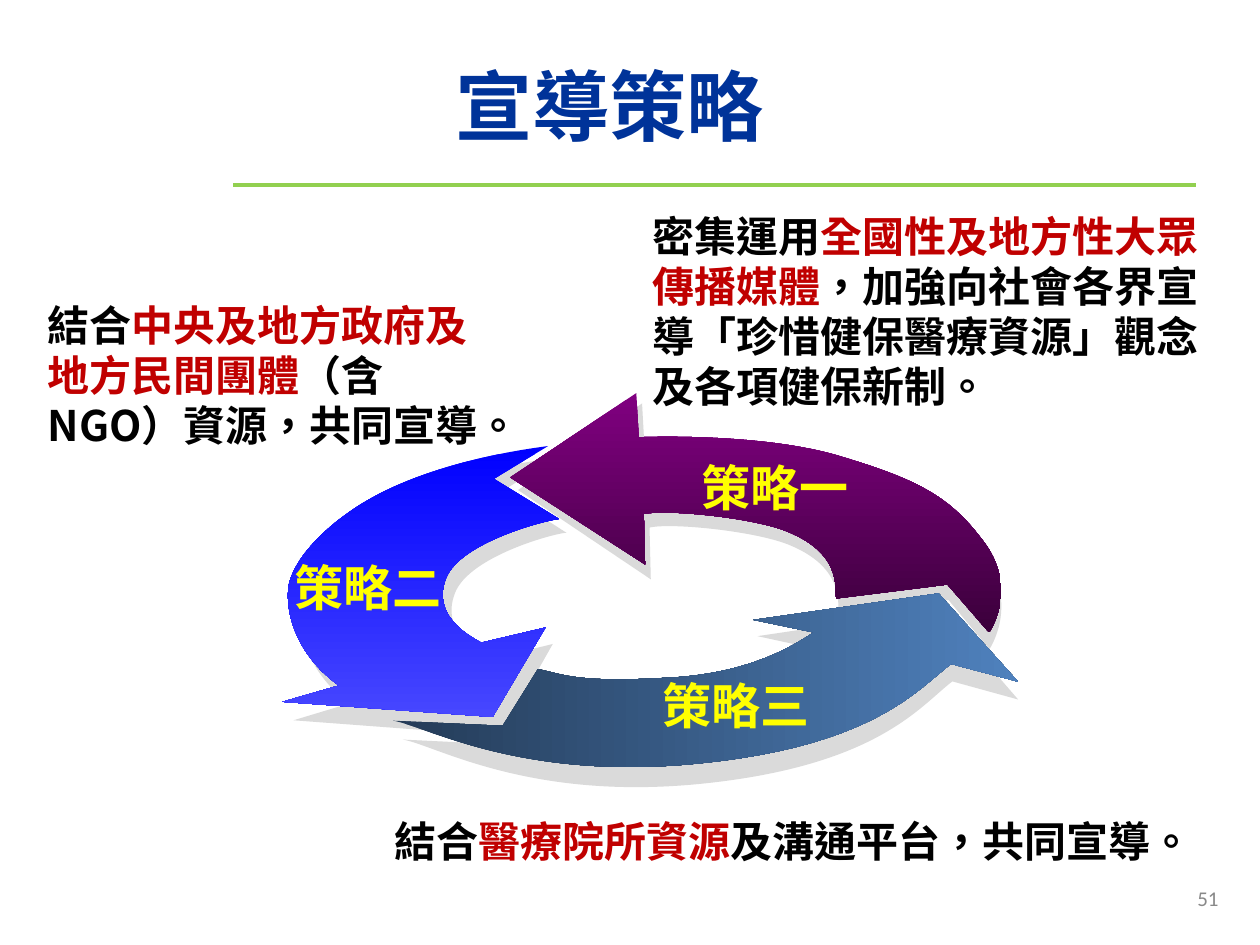
from lxml.etree import SubElement
from pptx import Presentation
from pptx.dml.color import RGBColor
from pptx.enum.shapes import MSO_CONNECTOR
from pptx.enum.text import MSO_ANCHOR, PP_ALIGN
from pptx.oxml.ns import qn
from pptx.util import Inches, Pt

COLORS = {
    "title": "003399", "rule": "92D050", "text": "000000", "accent": "C00000",
    "label": "FFFF00", "number": "898989", "shadow": "C0C0C0",
    "steel_dark": "243B57", "steel": "4F81BD",
    "purple": "800080", "purple_dark": "3B003B",
    "blue": "0000FF", "blue_light": "4747FF",
}
CJK = "Noto Sans CJK SC"

BOTTOM_ARROW = [
    (4.27, 5.31), (4.47, 5.35, 4.57, 5.42, 5.28, 5.38),
    (5.99, 5.35, 6.34, 5.09, 6.46, 5.02), (5.98, 4.92), (7.45, 4.71),
    (8.08, 5.41), (7.55, 5.27), (7.29, 5.46, 6.95, 5.92, 5.54, 6.06),
    (4.13, 6.2, 3.38, 5.76, 3.12, 5.72), (3.99, 5.76), (4.27, 5.31),
]
RIGHT_ARROW = [
    (5.07, 3.47), (5.05, 3.12), (4.05, 3.79), (5.12, 4.48), (5.11, 4.08),
    (5.29, 4.04, 5.99, 4.11, 6.25, 4.22), (6.72, 4.41, 6.61, 4.72, 6.64, 4.75),
    (7.52, 4.64), (7.85, 5.02), (7.89, 4.96, 8.07, 4.64, 7.8, 4.29),
    (7.53, 3.93, 7.27, 3.8, 6.63, 3.61), (5.99, 3.43, 5.07, 3.47, 5.07, 3.47),
]
LEFT_ARROW = [
    (2.24, 5.57), (3.91, 5.69), (4.33, 4.98), (3.82, 5.1),
    (3.69, 5.03, 3.43, 4.87, 3.54, 4.59), (3.65, 4.3, 4.36, 4.12, 4.44, 4.12),
    (3.92, 3.8), (4.35, 3.54), (3.81, 3.61, 3.33, 3.75, 2.99, 3.93),
    (2.65, 4.11, 2.34, 4.4, 2.29, 4.65), (2.26, 4.9, 2.38, 5.22, 2.69, 5.44),
    (2.24, 5.57),
]
ARROWS = [
    (BOTTOM_ARROW, ("steel_dark", "steel"), 0),
    (RIGHT_ARROW, ("purple", "purple_dark"), 270),
    (LEFT_ARROW, ("blue", "blue_light"), 270),
]


def shadow_point(x, y):
    return x + (8.08 - x) / 65, y + y / 38


class Deck:
    def __init__(self):
        self.prs = Presentation()
        self.prs.slide_width, self.prs.slide_height = Inches(10), Inches(7.5)
        self.s = self.prs.slides.add_slide(self.prs.slide_layouts[6])

    def color(self, name):
        return RGBColor.from_string(COLORS[name])

    def rule(self, x1, x2, y):
        line = self.s.shapes.add_connector(
            MSO_CONNECTOR.STRAIGHT, Inches(x1), Inches(y), Inches(x2), Inches(y))
        line.line.color.rgb = self.color("rule")
        line.line.width = Pt(2.25)
        SubElement(line._element.spPr, qn("a:effectLst"))

    def outline(self, steps, place=lambda x, y: (x, y)):
        points = [tuple(map(Inches, place(*step[i:i + 2])))
                  for step in steps for i in range(0, len(step), 2)]
        builder = self.s.shapes.build_freeform(*points[0], scale=1.0)
        builder.add_line_segments(points[1:], close=True)
        sp = builder.convert_to_shape()
        segments = iter(list(sp._element.iter(qn("a:lnTo"))))
        for step in steps[1:]:
            segment = next(segments)
            if len(step) == 6:
                segment.tag = qn("a:cubicBezTo")
                for _ in range(2):
                    end = next(segments)
                    end.getparent().remove(end)
                    segment.append(end[0])
        sp.shadow.inherit = False
        sp.line.fill.background()
        return sp

    def shadow(self, steps):
        sp = self.outline(steps, shadow_point)
        sp.fill.solid()
        sp.fill.fore_color.rgb = self.color("shadow")
        clr = sp._element.spPr.find(qn("a:solidFill"))[0]
        SubElement(clr, qn("a:alpha"), val="58000")

    def arrow(self, steps, shades, angle):
        sp = self.outline(steps)
        sp.fill.gradient()
        sp.fill.gradient_angle = angle
        for stop, shade in zip(sp.fill.gradient_stops, shades):
            stop.color.rgb = self.color(shade)

    def text(self, box, runs, size, font=CJK, bold=True, align=PP_ALIGN.LEFT,
             middle=False, wrap=True):
        tf = self.s.shapes.add_textbox(*map(Inches, box)).text_frame
        tf.word_wrap = wrap
        p = tf.paragraphs[0]
        p.alignment = align
        if middle:
            tf.vertical_anchor = MSO_ANCHOR.MIDDLE
        else:
            p.line_spacing = Pt(round(size * 1.19, 1))
        for words, color in runs:
            r = p.add_run()
            r.text = words
            r.font.size, r.font.bold, r.font.name = Pt(size), bold, font
            r.font.color.rgb = self.color(color)
            r.font._element.set("lang", "zh-TW")
            SubElement(r.font._element, qn("a:ea"), typeface=font)


def main():
    deck = Deck()
    deck.rule(1.85, 9.49, 1.47)
    deck.text((1.06, 0.52, 7.56, 0.62), [("宣導策略", "title")], 44,
              align=PP_ALIGN.CENTER, middle=True)
    for steps, _, _ in ARROWS:
        deck.shadow(steps)
    for arrow in ARROWS:
        deck.arrow(*arrow)
    deck.text((5.08, 1.62, 4.57, 1.72), [
        ("密集運用", "text"), ("全國性及地方性大眾傳播媒體", "accent"),
        ("，加強向社會各界宣導「珍惜健保醫療資源」觀念及各項健保新制。", "text")], 24)
    for words, x, y in [("策略一", 5.47, 3.59), ("策略二", 2.24, 4.38),
                        ("策略三", 5.16, 5.32)]:
        deck.text((x, y, 1.38, 0.57), [(words, "label")], 28, wrap=False)
    deck.text((0.28, 2.33, 3.78, 1.31), [
        ("結合", "text"), ("中央及地方政府及地方民間團體", "accent"),
        ("（含NGO）資源，共同宣導。", "text")], 24)
    deck.text((3.03, 6.43, 6.6, 0.5), [
        ("結合", "text"), ("醫療院所資源", "accent"),
        ("及溝通平台，共同宣導。", "text")], 24)
    deck.text((7.44, 6.98, 2.33, 0.35), [("51", "number")], 12, font="Calibri",
              bold=False, align=PP_ALIGN.RIGHT)
    deck.prs.save("out.pptx")


if __name__ == "__main__":
    main()
